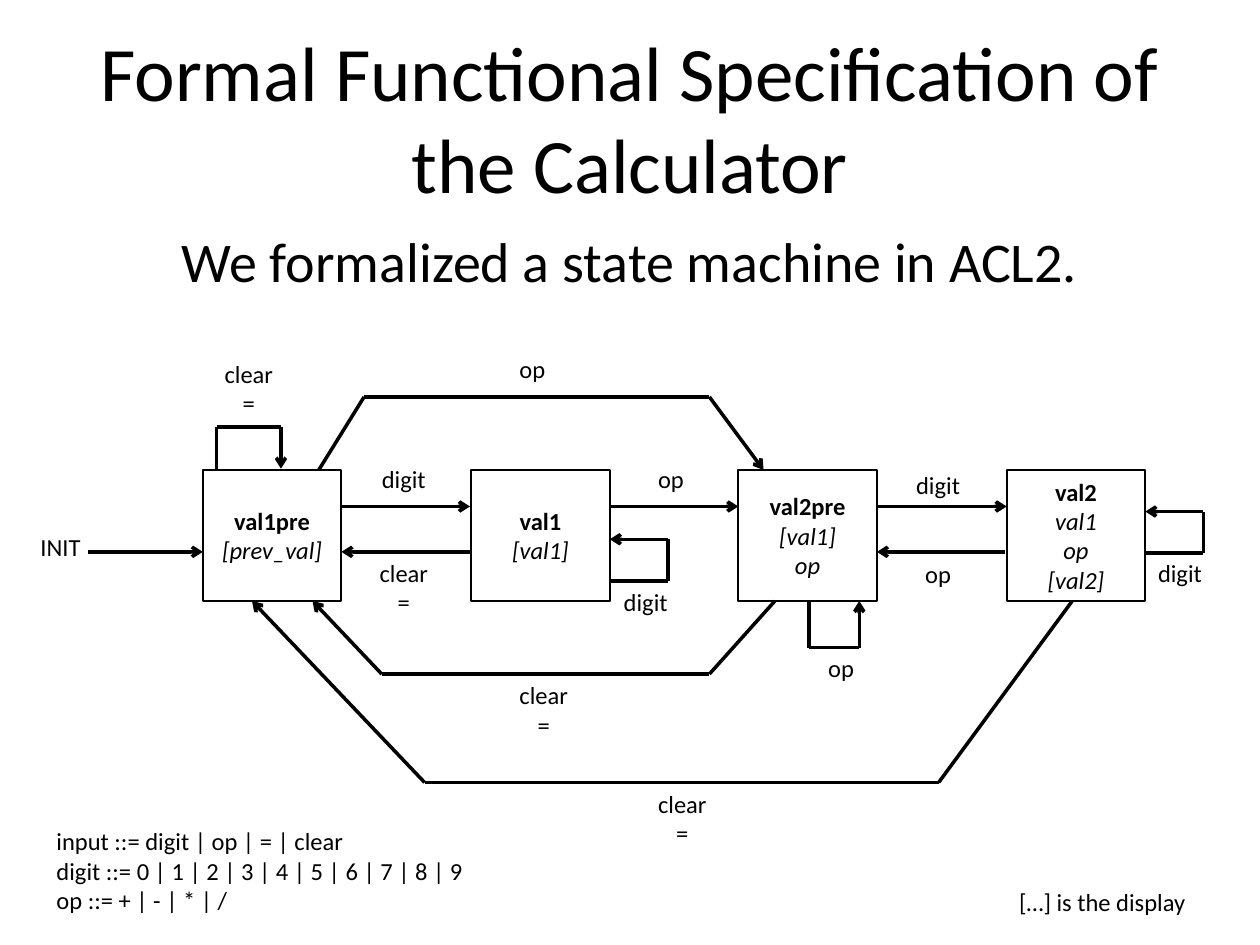
from itertools import pairwise
from pptx import Presentation
from pptx.dml.color import RGBColor
from pptx.enum.shapes import MSO_CONNECTOR as CONN, MSO_SHAPE as SHAPE
from pptx.enum.text import MSO_ANCHOR as ANCHOR, MSO_AUTO_SIZE as FIT, PP_ALIGN as ALIGN
from pptx.oxml.ns import qn
from pptx.util import Pt
from lxml.etree import SubElement

PX = 9144
BLACK = RGBColor(0, 0, 0)
BOX_W, BOX_H, BOX_TOP = 110, 104, 373
LABEL_W = {"clear": 59, "digit": 55, "op": 41, "INIT": 52}

STATES = [
    (161, ["val1pre", "[prev_val]"]),
    (374, ["val1", "[val1]"]),
    (586, ["val2pre", "[val1]", "op"]),
    (799, ["val2", "val1", "op", "[val2]"]),
]
TRANSITIONS = [
    [(70, 438), (161, 438)],
    [(271, 402), (373, 402)],
    [(484, 402), (586, 402)],
    [(696, 402), (799, 402)],
    [(373, 438), (271, 438)],
    [(798, 438), (696, 438)],
    [(172, 372), (172, 339), (223, 339), (223, 372)],
    [(253, 373), (289, 315), (563, 315), (606, 373)],
    [(484, 461), (530, 461), (530, 428), (484, 428)],
    [(909, 439), (955, 439), (955, 406), (909, 406)],
    [(642, 477), (642, 514), (682, 514), (682, 477)],
    [(615, 477), (563, 535), (303, 535), (248, 477)],
    [(851, 477), (745, 621), (337, 621), (200, 477)],
]
LABELS = [
    (168, 280, ["clear", "="]),
    (291, 438, ["clear", "="]),
    (402, 535, ["clear", "="]),
    (512, 621, ["clear", "="]),
    (293, 363, ["digit"]),
    (717, 368, ["digit"]),
    (485, 461, ["digit"]),
    (909, 438, ["digit"]),
    (402, 276, ["op"]),
    (512, 363, ["op"]),
    (724, 439, ["op"]),
    (647, 513, ["op"]),
    (22, 417, ["INIT"]),
]
GRAMMAR = [
    "input ::= digit | op | = | clear",
    "digit ::= 0 | 1 | 2 | 3 | 4 | 5 | 6 | 7 | 8 | 9",
    "op ::= + | - | * | /",
]


def px(*values):
    return [v * PX for v in values]


def apply(obj, **values):
    for name, value in values.items():
        setattr(obj, name, value)


def write(tf, lines, size, align=ALIGN.CENTER):
    for i, line in enumerate(lines):
        p = tf.add_paragraph() if i else tf.paragraphs[0]
        p.alignment = align
        r = p.add_run()
        r.text = line
        apply(r.font, name="Calibri", size=Pt(size))
        r.font.color.rgb = BLACK


def add_title(s, text):
    sp = s.shapes.title
    apply(sp, **dict(zip(("left", "top", "width", "height"), px(50, 30, 900, 125))))
    tf = sp.text_frame
    apply(tf, auto_size=FIT.NONE, vertical_anchor=ANCHOR.MIDDLE)
    write(tf, [text], 44)


def add_subtitle(s, text):
    tf = s.shapes.add_textbox(*px(50, 175, 900, 495)).text_frame
    tf.word_wrap = True
    write(tf, [text], 32)
    tf.paragraphs[0].space_before = Pt(6.4)


def add_state(s, left, lines):
    sp = s.shapes.add_shape(SHAPE.RECTANGLE, *px(left, BOX_TOP, BOX_W, BOX_H))
    sp.shadow.inherit = False
    sp.fill.background()
    sp.line.color.rgb = BLACK
    sp.line.width = Pt(1)
    tf = sp.text_frame
    apply(tf, word_wrap=True, vertical_anchor=ANCHOR.MIDDLE)
    write(tf, lines, 14)
    for i, p in enumerate(tf.paragraphs):
        apply(p.runs[0].font, bold=i == 0, italic=i > 0)


def add_transition(s, points):
    for start, end in pairwise(points):
        line = s.shapes.add_connector(CONN.STRAIGHT, *px(*start, *end))
        line.line.color.rgb = BLACK
        line.line.width = Pt(2)
        pr = line._element.spPr
        if end == points[-1]:
            SubElement(pr.find(qn("a:ln")), qn("a:tailEnd"), type="arrow")
        SubElement(pr, qn("a:effectLst"))


def add_label(s, left, top, lines, width=None, align=ALIGN.CENTER):
    width = width or LABEL_W[lines[0]]
    height = 34 + 23 * (len(lines) - 1)
    tf = s.shapes.add_textbox(*px(left, top, width, height)).text_frame
    apply(tf, word_wrap=False, auto_size=FIT.SHAPE_TO_FIT_TEXT)
    write(tf, lines, 14, align)


def main():
    prs = Presentation()
    prs.slide_width, prs.slide_height = px(1000, 750)
    s = prs.slides.add_slide(prs.slide_layouts[5])
    add_title(s, "Formal Functional Specification of the Calculator")
    add_subtitle(s, "We formalized a state machine in ACL2.")
    for state in STATES:
        add_state(s, *state)
    for points in TRANSITIONS:
        add_transition(s, points)
    for label in LABELS:
        add_label(s, *label)
    add_label(s, 35, 651, GRAMMAR, 346, ALIGN.LEFT)
    add_label(s, 799, 699, ["[…] is the display"], 154, ALIGN.LEFT)
    prs.save("out.pptx")


if __name__ == "__main__":
    main()
